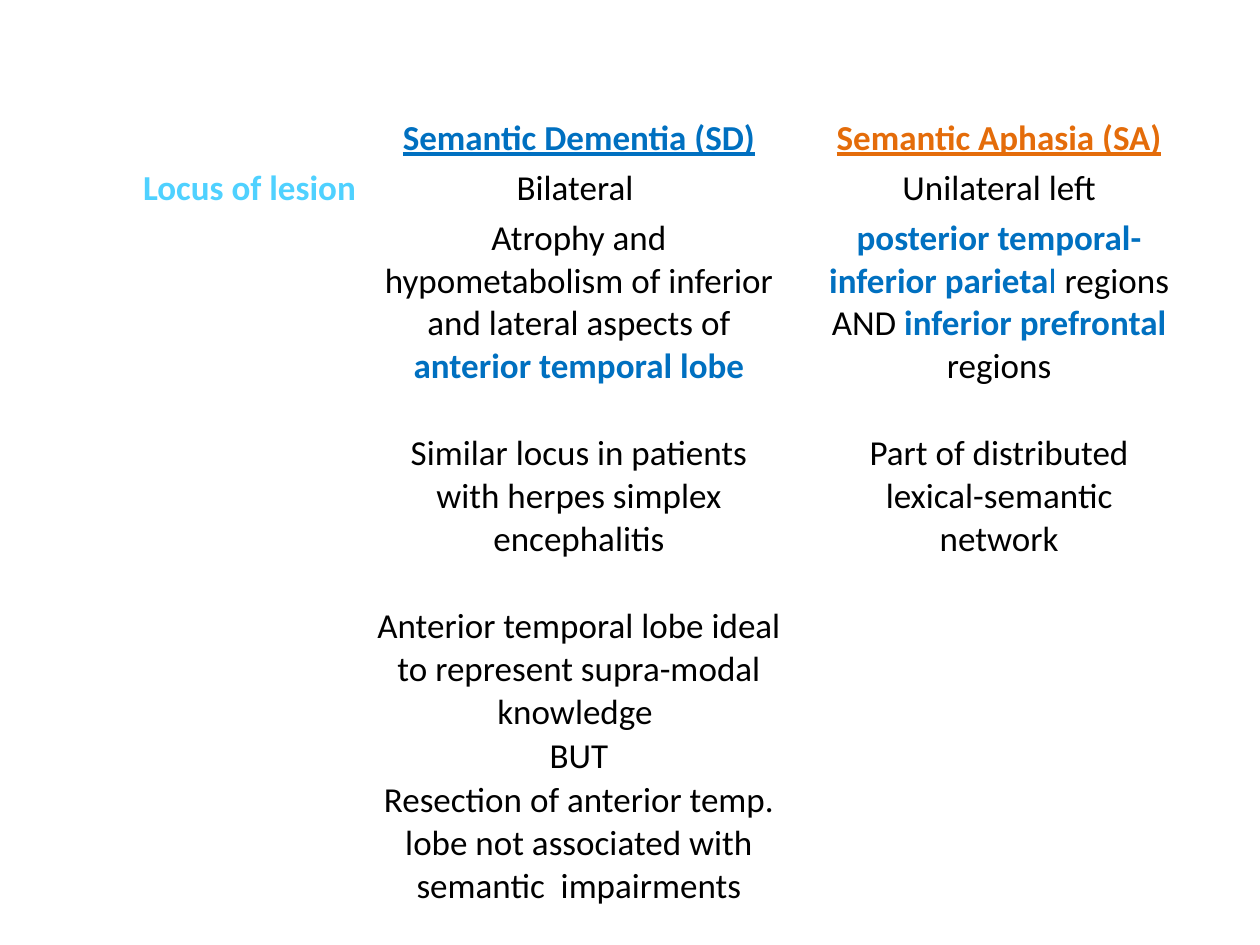
from pptx import Presentation
from pptx.dml.color import RGBColor
from pptx.enum.text import MSO_ANCHOR, PP_ALIGN
from pptx.util import Inches, Pt

CENTER = PP_ALIGN.CENTER
MIDDLE = MSO_ANCHOR.MIDDLE
BLANK_LAYOUT = 6

BLACK, BLUE, ORANGE, SKY = "000000", "0070C0", "E46C0A", "4FD1FF"

COLUMN_WIDTHS = [2, 3.23, 0.31, 2.82]
LINE, THREE_LINES, FOUR_LINES = 0.34, 1.03, 1.37
ROW_HEIGHTS = [LINE, 0.44, FOUR_LINES, LINE, THREE_LINES,
               LINE, THREE_LINES, LINE, THREE_LINES]
LABEL, DEMENTIA, APHASIA = 0, 1, 3

# (row, column): runs of (text, colour, bold, underline)
CELL_RUNS = {
    (0, DEMENTIA): [("Semantic Dementia (SD)", BLUE, True, True)],
    (0, APHASIA): [("Semantic Aphasia (SA)", ORANGE, True, True)],
    (1, LABEL): [("Locus of lesion", SKY, True, False)],
    (1, DEMENTIA): [("Bilateral ", BLACK, False, False)],
    (1, APHASIA): [("Unilateral left", BLACK, False, False)],
    (2, DEMENTIA): [
        ("Atrophy and hypometabolism of inferior and lateral aspects of ",
         BLACK, False, False),
        ("anterior temporal lobe", BLUE, True, False)],
    (2, APHASIA): [
        ("posterior temporal-inferior parieta", BLUE, True, False),
        ("l ", BLUE, False, False),
        ("regions AND ", BLACK, False, False),
        ("inferior prefrontal ", BLUE, True, False),
        ("regions", BLACK, False, False)],
    (4, DEMENTIA): [
        ("Similar locus in patients with herpes simplex encephalitis",
         BLACK, False, False)],
    (4, APHASIA): [
        ("Part of distributed lexical-semantic network", BLACK, False, False)],
    (6, DEMENTIA): [
        ("Anterior temporal lobe ideal to represent supra-modal knowledge ",
         BLACK, False, False)],
    (7, DEMENTIA): [("BUT", BLACK, False, False)],
    (8, DEMENTIA): [
        ("Resection of anterior temp. lobe not associated with "
         "semantic  impairments", BLACK, False, False)],
}


def color(hex_string):
    return RGBColor.from_string(hex_string)


def format_cell(cell):
    cell.fill.background()
    cell.vertical_anchor = MIDDLE
    cell.margin_left = cell.margin_right = cell.margin_top = Inches(0.01)
    cell.margin_bottom = 0


def write_runs(cell, runs):
    paragraph = cell.text_frame.paragraphs[0]
    paragraph.alignment = CENTER
    for text, hex_string, bold, underline in runs:
        run = paragraph.add_run()
        run.text = text
        run.font.name = "Calibri"
        run.font.size = Pt(20)
        run.font.bold = bold
        run.font.underline = underline
        run.font.color.rgb = color(hex_string)


def add_comparison_table(slide):
    shape = slide.shapes.add_table(
        len(ROW_HEIGHTS), len(COLUMN_WIDTHS), Inches(0.98), Inches(0.92),
        Inches(sum(COLUMN_WIDTHS)), Inches(sum(ROW_HEIGHTS)))
    table = shape.table
    table.first_row = False
    table.horz_banding = False
    for column, width in zip(table.columns, COLUMN_WIDTHS):
        column.width = Inches(width)
    for row, height in zip(table.rows, ROW_HEIGHTS):
        row.height = Inches(height)
    for cell in table.iter_cells():
        format_cell(cell)
    for (row, column), runs in CELL_RUNS.items():
        write_runs(table.cell(row, column), runs)


def main():
    presentation = Presentation()
    presentation.slide_width = Inches(10)
    presentation.slide_height = Inches(7.5)
    slide = presentation.slides.add_slide(
        presentation.slide_layouts[BLANK_LAYOUT])
    add_comparison_table(slide)
    presentation.save("out.pptx")


if __name__ == "__main__":
    main()
